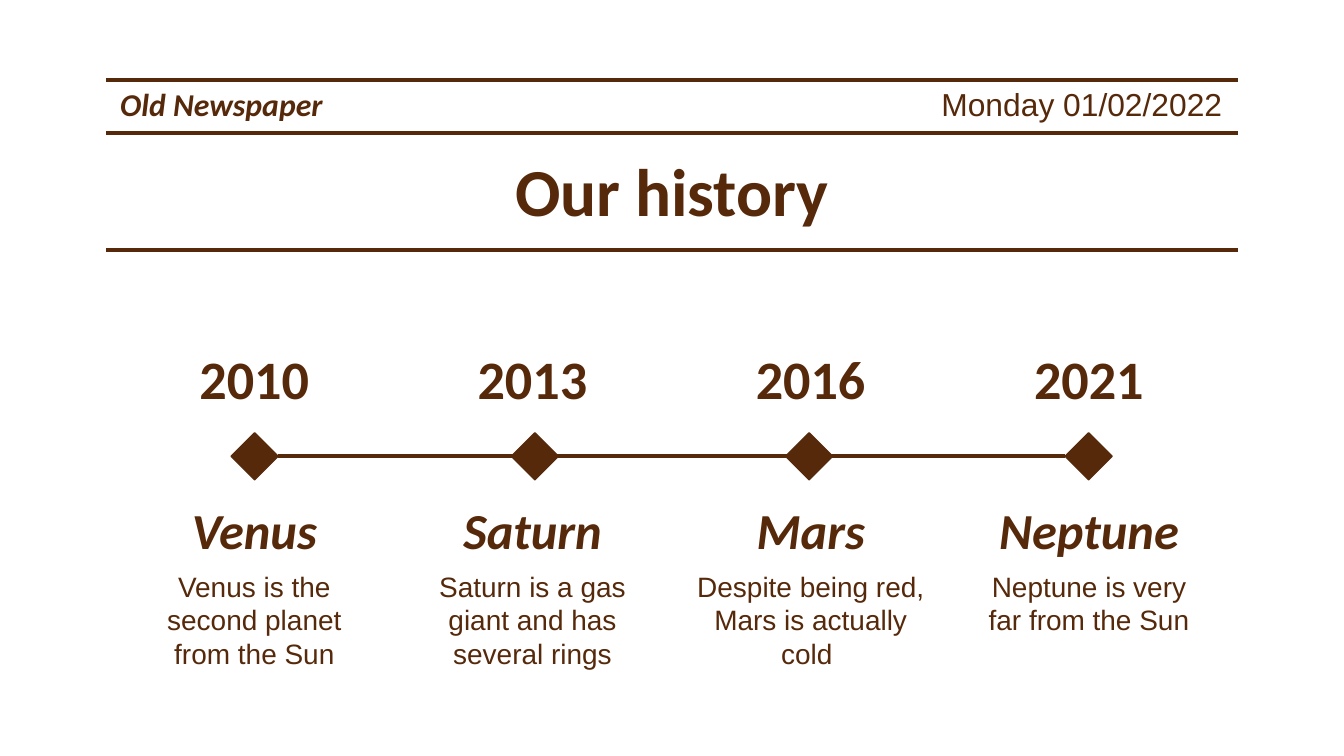
from dataclasses import dataclass

from lxml.etree import SubElement
from pptx import Presentation
from pptx.dml.color import RGBColor
from pptx.enum.shapes import MSO_CONNECTOR as Connector, MSO_SHAPE as Shape
from pptx.enum.text import MSO_ANCHOR as Anchor, MSO_AUTO_SIZE as AutoSize, PP_ALIGN as Align
from pptx.oxml.ns import qn
from pptx.util import Emu, Pt

PX_PER_INCH = 200


def px(length: int) -> Emu:
    return Emu(length * 914400 // PX_PER_INCH)


@dataclass(frozen=True)
class Style:
    size: int
    font: str
    bold: bool = False
    italic: bool = False


@dataclass(frozen=True)
class Theme:
    ink: RGBColor = RGBColor(0x56, 0x29, 0x0B)
    paper: RGBColor = RGBColor(0xFF, 0xFF, 0xFF)
    rule_width: float = 2.25
    outline_width: float = 0.75
    title: Style = Style(36, "Calibri", bold=True)
    year: Style = Style(29, "Calibri", bold=True)
    planet: Style = Style(27, "Calibri", bold=True, italic=True)
    body: Style = Style(15, "Arial")
    masthead: Style = Style(17, "Calibri", bold=True, italic=True)
    date: Style = Style(17, "Arial")


@dataclass(frozen=True)
class Box:
    left: int
    top: int
    width: int
    height: int


@dataclass(frozen=True)
class Milestone:
    year: str
    planet: str
    description: str
    marker_left: int


THEME = Theme()
MILESTONES = [
    Milestone("2010", "Venus", "Venus is the second planet from the Sun", 344),
    Milestone("2013", "Saturn", "Saturn is a gas giant and has several rings", 761),
    Milestone("2016", "Mars", "Despite being red, Mars is actually cold ", 1169),
    Milestone("2021", "Neptune", "Neptune is very far from the Sun", 1585),
]
RULE_LEFT, RULE_RIGHT = 158, 1842
RULE_TOPS = [119, 198, 372]
COLUMN_LEFT, COLUMN_STEP, COLUMN_WIDTH = 185, 414, 387
MARKER_TOP, MARKER_SIZE = 644, 70
INSET = 20


def place(shape, box: Box) -> None:
    shape.left, shape.top = px(box.left), px(box.top)
    shape.width, shape.height = px(box.width), px(box.height)


def write(shape, text: str, style: Style, align: Align) -> None:
    frame = shape.text_frame
    frame.word_wrap = True
    frame.auto_size = AutoSize.NONE
    frame.vertical_anchor = Anchor.TOP
    frame.margin_left = frame.margin_right = px(INSET)
    frame.margin_top = frame.margin_bottom = px(INSET)
    paragraph = frame.paragraphs[0]
    paragraph.alignment = align
    run = paragraph.add_run()
    run.text = text
    run.font.name = style.font
    run.font.size = Pt(style.size)
    run.font.bold = style.bold
    run.font.italic = style.italic
    run.font.color.rgb = THEME.ink


def add_text(slide, box: Box, text: str, style: Style, align: Align = Align.CENTER) -> None:
    textbox = slide.shapes.add_textbox(0, 0, 0, 0)
    place(textbox, box)
    write(textbox, text, style, align)


def add_rule(slide, left: int, right: int, top: int):
    rule = slide.shapes.add_connector(Connector.STRAIGHT, px(left), px(top), px(right), px(top))
    rule.line.color.rgb = THEME.ink
    rule.line.width = Pt(THEME.rule_width)
    SubElement(rule._element.spPr, qn("a:effectLst"))
    return rule


def add_marker(slide, left: int):
    marker = slide.shapes.add_shape(Shape.DIAMOND, 0, 0, 0, 0)
    place(marker, Box(left, MARKER_TOP, MARKER_SIZE, MARKER_SIZE))
    marker.shadow.inherit = False
    marker.fill.solid()
    marker.fill.fore_color.rgb = THEME.ink
    marker.line.color.rgb = THEME.ink
    marker.line.width = Pt(THEME.outline_width)
    return marker


def add_milestone(slide, index: int, milestone: Milestone):
    left = COLUMN_LEFT + index * COLUMN_STEP
    add_text(slide, Box(left, 494, COLUMN_WIDTH, 112), milestone.year, THEME.year)
    add_text(slide, Box(left, 723, COLUMN_WIDTH, 112), milestone.planet, THEME.planet)
    add_text(slide, Box(left, 827, COLUMN_WIDTH, 218), milestone.description, THEME.body)
    return add_marker(slide, milestone.marker_left)


def main() -> None:
    deck = Presentation()
    deck.slide_width, deck.slide_height = px(2000), px(1125)
    slide = deck.slides.add_slide(deck.slide_layouts.get_by_name("Title Only"))
    slide.background.fill.solid()
    slide.background.fill.fore_color.rgb = THEME.paper

    for top in RULE_TOPS:
        add_rule(slide, RULE_LEFT, RULE_RIGHT, top)
    add_text(slide, Box(159, 106, 536, 112), "Old Newspaper", THEME.masthead, Align.LEFT)
    add_text(slide, Box(1273, 106, 566, 112), "Monday 01/02/2022", THEME.date, Align.RIGHT)

    title = slide.shapes.title
    place(title, Box(156, 202, 1688, 150))
    write(title, "Our history", THEME.title, Align.CENTER)

    markers = [add_milestone(slide, index, milestone) for index, milestone in enumerate(MILESTONES)]
    timeline = add_rule(slide, RULE_LEFT, RULE_RIGHT, MARKER_TOP)
    timeline.begin_connect(markers[0], 3)
    timeline.end_connect(markers[-1], 1)

    deck.save("out.pptx")


if __name__ == "__main__":
    main()
